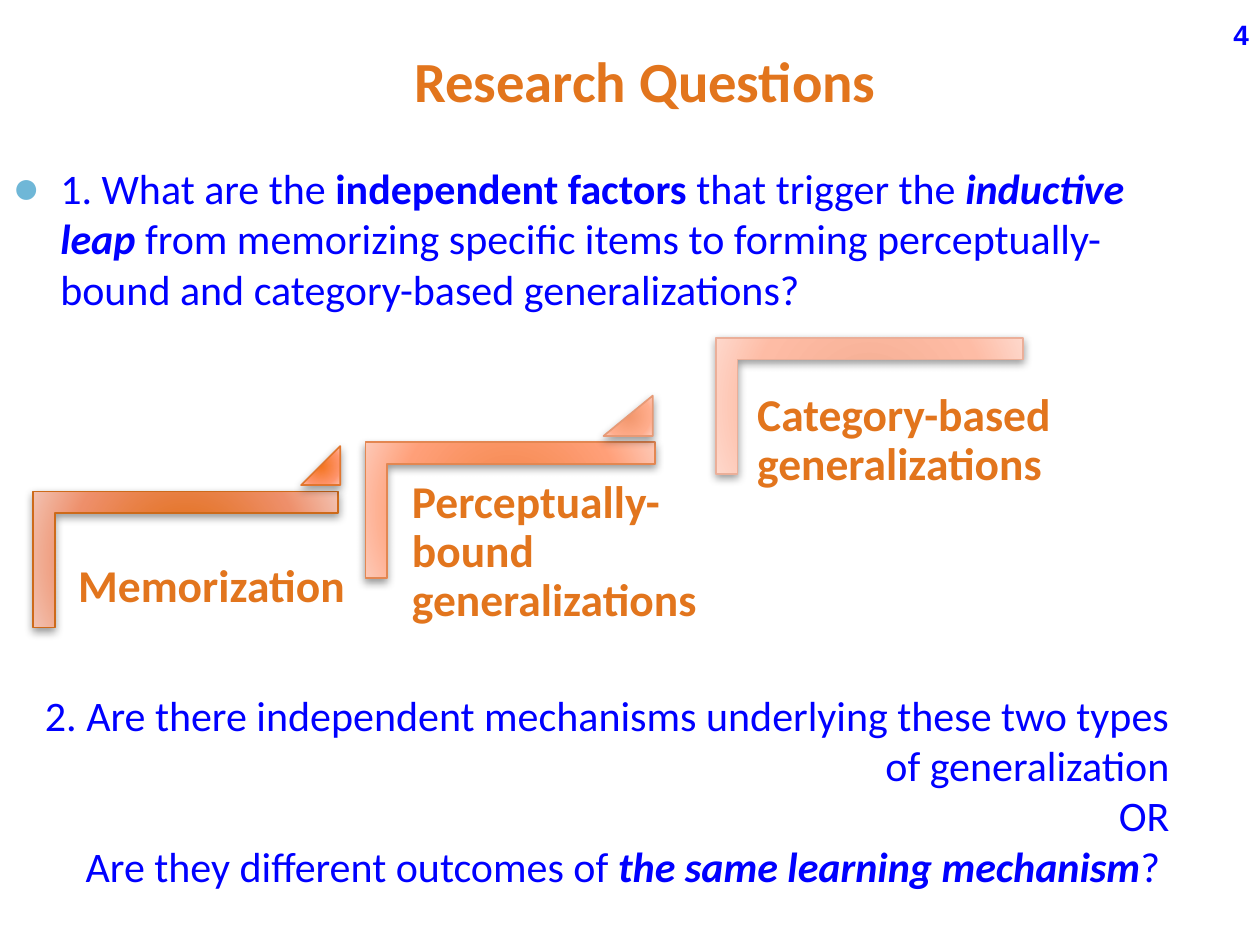
"""Build the Research Questions slide with its three-step staircase."""
from lxml.etree import SubElement
from pptx import Presentation
from pptx.dml.color import RGBColor
from pptx.enum.shapes import MSO_SHAPE as Preset
from pptx.enum.text import MSO_ANCHOR as Anchor, MSO_AUTO_SIZE as AutoSize, PP_ALIGN as Align
from pptx.oxml import parse_xml
from pptx.oxml.ns import nsdecls, qn
from pptx.util import Inches, Pt

ORANGE = RGBColor(0xE2, 0x75, 0x1D)
BLUE = RGBColor(0x00, 0x00, 0xFF)
BULLET_BLUE = RGBColor(0x6F, 0xB7, 0xD7)

TITLE = [[("Research Questions", "b")]]
FIRST_QUESTION = [[
    ("1. What are the ", ""),
    ("independent factors", "b"),
    (" that trigger the ", ""),
    ("inductive leap ", "bi"),
    ("from memorizing specific items to forming perceptually-bound "
     "and category-based generalizations?", ""),
]]
SECOND_QUESTION = [
    [("2. Are there independent mechanisms underlying these two types of generalization", "")],
    [("OR", "")],
    [("Are they different outcomes of ", ""), ("the same learning mechanism", "bi"), ("? ", "")],
]
PAGE_NUMBER = [[("4", "b")]]

CORNER_DEPTH = 1.08
CORNER_SHARE = 0.161
STEPS = [
    {"label": "Memorization", "label_box": (0.51, 4.36, 2.62, 0.48),
     "corner": (0.26, 3.9, 2.42), "corner_colors": ("DF6808", "EE8F6A", "F2C2B2", "CD6A1A"),
     "triangle": (2.39, 3.54, 0.31, 0.31),
     "triangle_colors": ("F3731C", "FF946B", "FDC3B2", "E1762E")},
    {"label": "Perceptually-bound generalizations", "label_box": (3.16, 3.69, 2.61, 1.43),
     "corner": (2.9, 3.51, 2.3), "corner_colors": ("F28344", "FF9F78", "FDC9B7", "E38752"),
     "triangle": (4.79, 3.14, 0.39, 0.32),
     "triangle_colors": ("F2966B", "FFAC8B", "FDCFC0", "E79A76")},
    {"label": "Category-based generalizations", "label_box": (5.9, 3, 2.88, 1.37),
     "corner": (5.68, 2.68, 2.44), "corner_colors": ("F3AC90", "FEBCA5", "FED8CC", "EBAF99")},
]


def add_text(slide, box, paragraphs, size, color, font="Calibri", align=Align.LEFT,
             anchor=Anchor.TOP, inset=None, spacing=None, grow=False, wrap=True):
    shape = slide.shapes.add_textbox(*map(Inches, box))
    frame = shape.text_frame
    frame.word_wrap = wrap
    frame.vertical_anchor = anchor
    frame.auto_size = AutoSize.SHAPE_TO_FIT_TEXT if grow else AutoSize.NONE
    if inset is not None:
        frame.margin_left = frame.margin_right = Inches(inset)
        frame.margin_top = frame.margin_bottom = Inches(inset)
    for index, runs in enumerate(paragraphs):
        paragraph = frame.add_paragraph() if index else frame.paragraphs[0]
        paragraph.alignment = align
        paragraph.line_spacing = spacing
        for text, style in runs:
            run = paragraph.add_run()
            run.text = text
            run.font.name = font
            run.font.size = Pt(size)
            run.font.color.rgb = color
            run.font.bold = "b" in style
            run.font.italic = "i" in style
    return frame


def add_bullet(paragraph, indent, color, percent):
    properties = paragraph._p.get_or_add_pPr()
    properties.set("marL", str(Inches(indent)))
    properties.set("indent", str(-Inches(indent)))
    bullet_color = SubElement(properties, qn("a:buClr"))
    SubElement(bullet_color, qn("a:srgbClr"), val=str(color))
    SubElement(properties, qn("a:buSzPct"), val=str(percent * 1000))
    SubElement(properties, qn("a:buFont"), typeface="Arial")
    SubElement(properties, qn("a:buChar"), char="●")


def add_shaded_shape(slide, preset, box, adjustments, colors, rotation=0):
    shape = slide.shapes.add_shape(preset, *map(Inches, box))
    shape.rotation = rotation
    for index, value in enumerate(adjustments):
        shape.adjustments[index] = value
    *stops, line_color = colors
    stop_xml = "".join(
        f'<a:gs pos="{position * 1000}"><a:srgbClr val="{color}"/></a:gs>'
        for position, color in zip((0, 69, 100), stops))
    properties = shape._element.spPr
    properties.find(qn("a:prstGeom")).addnext(parse_xml(
        f'<a:gradFill {nsdecls("a")} rotWithShape="1"><a:gsLst>{stop_xml}</a:gsLst>'
        '<a:path path="circle"><a:fillToRect l="100000" t="100000" r="100000" b="100000"/>'
        '</a:path></a:gradFill>'))
    shape.line.color.rgb = RGBColor.from_string(line_color)
    shape.line.width = Pt(1)
    shape.shadow.inherit = False
    properties.find(qn("a:effectLst")).append(parse_xml(
        f'<a:outerShdw {nsdecls("a")} blurRad="{Pt(5)}" dist="{Pt(2)}" dir="5400000" '
        'rotWithShape="0"><a:srgbClr val="000000"><a:alpha val="40000"/></a:srgbClr>'
        '</a:outerShdw>'))


def add_step(slide, step):
    left, top, length = step["corner"]
    shift = (length - CORNER_DEPTH) / 2
    add_shaded_shape(slide, Preset.CORNER, (left + shift, top - shift, CORNER_DEPTH, length),
                     (CORNER_SHARE, CORNER_SHARE), step["corner_colors"], rotation=90)
    add_text(slide, step["label_box"], [[(step["label"], "b")]], 26, ORANGE,
             inset=0.11, spacing=0.9)
    if "triangle" in step:
        add_shaded_shape(slide, Preset.ISOSCELES_TRIANGLE, step["triangle"], (1,),
                         step["triangle_colors"])


def main():
    presentation = Presentation()
    presentation.slide_width, presentation.slide_height = Inches(10), Inches(7.5)
    slide = presentation.slides.add_slide(presentation.slide_layouts[6])
    for step in STEPS:
        add_step(slide, step)
    add_text(slide, (1.62, 0.27, 7, 0.68), TITLE, 32.4, ORANGE,
             align=Align.CENTER, anchor=Anchor.BOTTOM)
    question = add_text(slide, (0, 1.24, 9.69, 1.64), FIRST_QUESTION, 24, BLUE)
    add_bullet(question.paragraphs[0], 0.38, BULLET_BLUE, 110)
    add_text(slide, (0, 5.42, 9.38, 1.72), SECOND_QUESTION, 24, BLUE,
             align=Align.RIGHT, grow=True)
    add_text(slide, (9.69, 0.09, 0.25, 0.37), PAGE_NUMBER, 16, BLUE, font="Arial",
             grow=True, wrap=False)
    presentation.save("out.pptx")


if __name__ == "__main__":
    main()
